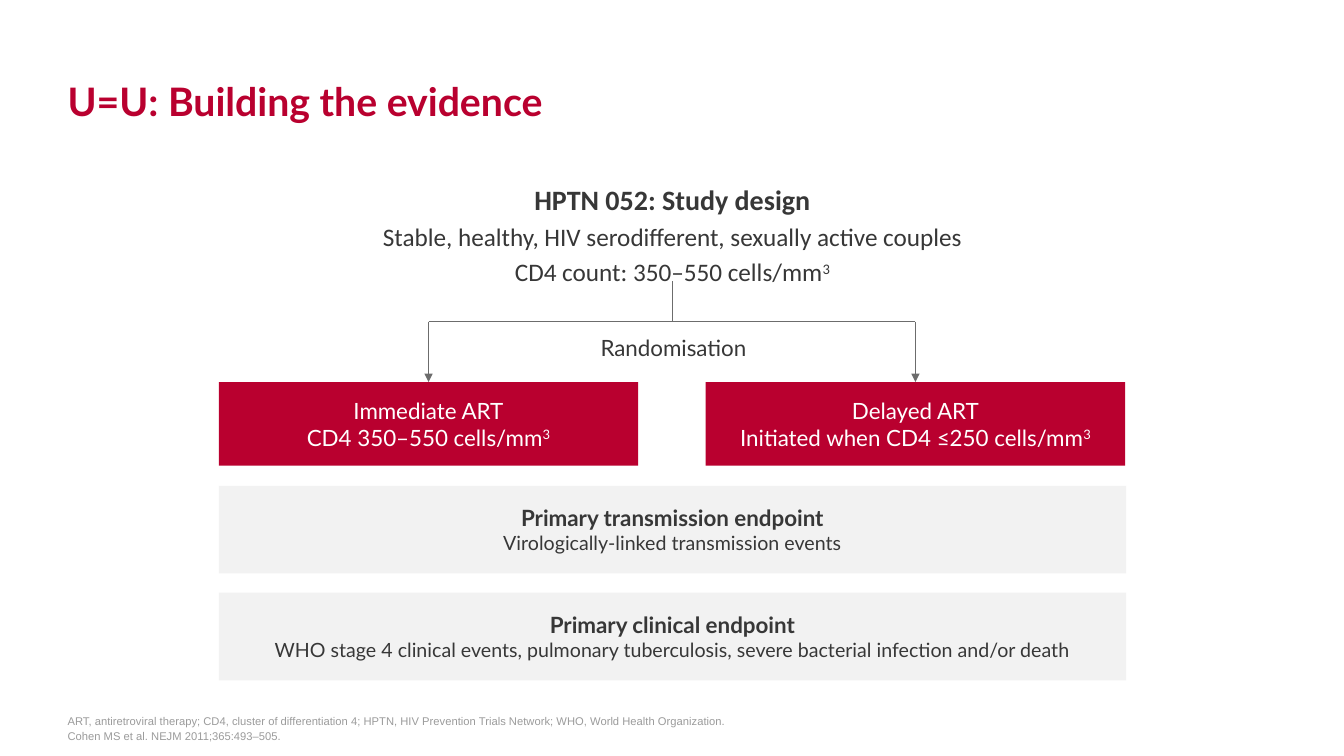
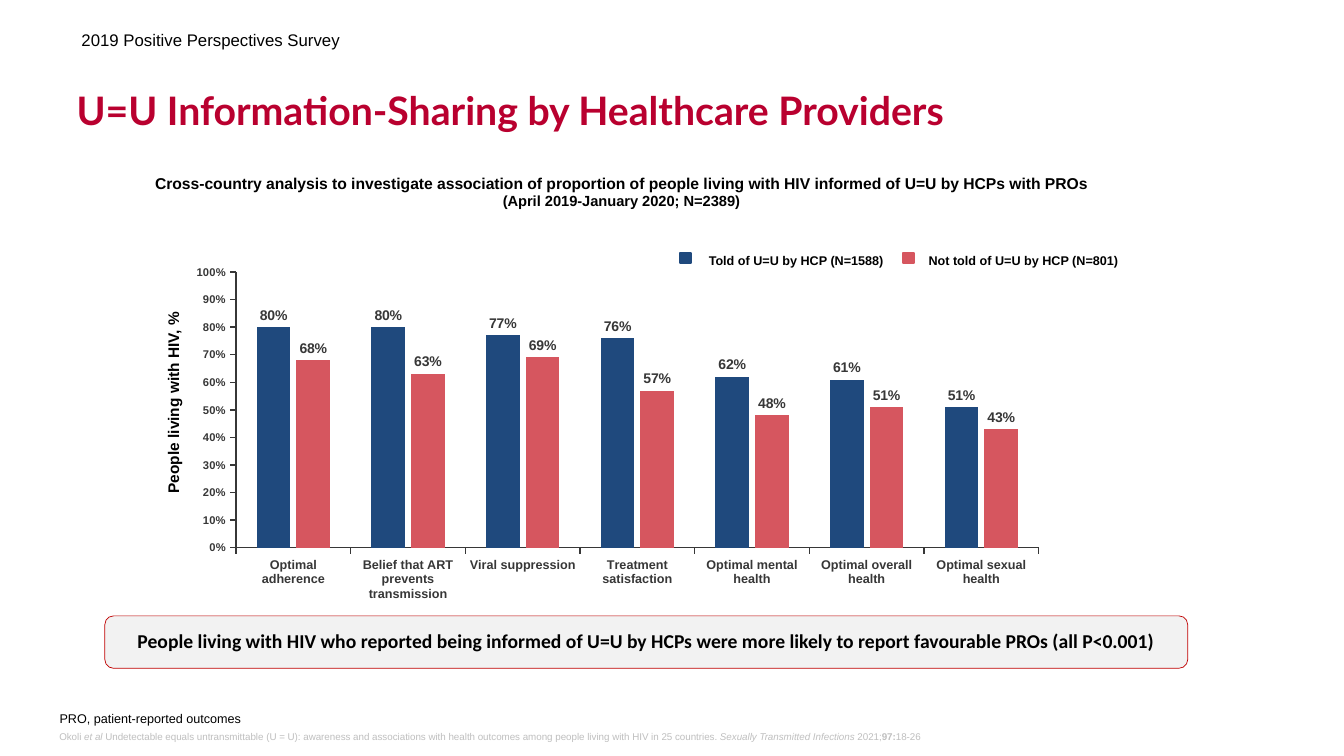
from lxml import etree
from pptx import Presentation
from pptx.chart.data import CategoryChartData
from pptx.dml.color import RGBColor
from pptx.enum.chart import XL_CHART_TYPE, XL_LABEL_POSITION, XL_TICK_MARK
from pptx.enum.shapes import MSO_CONNECTOR, MSO_SHAPE
from pptx.enum.text import MSO_ANCHOR, MSO_AUTO_SIZE, PP_ALIGN
from pptx.oxml import parse_xml
from pptx.oxml.ns import nsdecls, qn
from pptx.util import Emu, Pt

PX = 9144  # 100 px to the inch
COLORS = {
    "red": "B9002F", "border": "C00000", "panel": "F2F2F2", "white": "FFFFFF",
    "black": "000000", "text": "373737", "line": "6C6C6C", "note": "9B9B9B",
    "source": "BFBFBF", "told": "1F497D", "not told": "D6565F",
}
COLORS = {name: RGBColor.from_string(value) for name, value in COLORS.items()}
TITLE = {"name": "Lato", "size": Pt(28), "bold": True, "color": "red"}
LATO = {"name": "Lato", "size": Pt(16), "bold": False, "color": "text"}
CALIBRI = {"name": "Calibri", "size": Pt(18), "bold": False, "color": "text"}
ARIAL = {"name": "Arial", "size": Pt(12), "bold": False, "color": "black"}
CENTER = {"alignment": PP_ALIGN.CENTER}
TIGHT = {"line_spacing": 0.9}
SUPERSCRIPT = {"baseline": "30000"}


def write(box, lines, layout, anchor=MSO_ANCHOR.TOP, inset=True, wrap=True):
    """Fill a shape with lines of (font style, span, ...); a span is text or (text, changes).

    A "space_before" in the layout is left off the first paragraph.
    """
    frame = box.text_frame
    frame.auto_size = MSO_AUTO_SIZE.NONE
    frame.word_wrap = wrap
    frame.vertical_anchor = anchor
    if not inset:
        for side in ("left", "top", "right", "bottom"):
            setattr(frame, f"margin_{side}", 0)
    for index, (style, *spans) in enumerate(lines):
        para = frame.add_paragraph() if index else frame.paragraphs[0]
        for key, value in layout.items():
            if index or key != "space_before":
                setattr(para, key, value)
        for part in spans:
            text, changes = (part, {}) if isinstance(part, str) else part
            span = para.add_run()
            span.text = text
            for key, value in {**style, **changes}.items():
                if key == "color":
                    span.font.color.rgb = COLORS[value]
                elif key == "baseline":
                    span._r.get_or_add_rPr().set(key, value)
                else:
                    setattr(span.font, key, value)


def add_box(page, place, fill=None, line=None, width=1.5, kind=MSO_SHAPE.RECTANGLE):
    """Add a filled shape, or a plain text box when there is no fill."""
    place = [Emu(length * PX) for length in place]
    if fill is None:
        return page.shapes.add_textbox(*place)
    box = page.shapes.add_shape(kind, *place)
    box.shadow.inherit = False
    box.fill.solid()
    box.fill.fore_color.rgb = COLORS[fill]
    if line:
        box.line.color.rgb = COLORS[line]
        box.line.width = Pt(width)
    else:
        box.line.fill.background()
    return box


deck = Presentation()
deck.slide_width, deck.slide_height = Emu(1333 * PX), Emu(750 * PX)

pages = []
for title, place in [
    ("U=U: Building the evidence", (67, 0, 889, 123)),
    ("U=U Information-Sharing by Healthcare Providers", (76, 77, 1041, 55)),
]:
    page = deck.slides.add_slide(deck.slide_layouts[5])
    heading = page.shapes.title
    for side, length in zip(("left", "top", "width", "height"), place):
        setattr(heading, side, Emu(length * PX))
    write(heading, [(TITLE, title)], {"alignment": PP_ALIGN.LEFT},
          MSO_ANCHOR.BOTTOM, inset=False)
    pages.append(page)
design_page, survey_page = pages

# Study design
LEFT, WIDTH = 217, 900
ARM_WIDTH, ARM_TOP, FORK_TOP = 416, 379, 319
write(add_box(design_page, (LEFT, 181, WIDTH, 105)), [
    ({**CALIBRI, "size": Pt(20), "bold": True}, "HPTN 052: Study design"),
    (CALIBRI, "Stable, healthy, HIV serodifferent, sexually active couples"),
    (CALIBRI, "CD4 count: 350–550 cells/mm", ("3", SUPERSCRIPT)),
], {**CENTER, "space_before": Pt(3.6)}, inset=False)

arm_style = {**LATO, "color": "white"}
arm_centers = []
for left, name, rule in [
    (LEFT, "Immediate ART", "CD4 350–550 cells/mm"),
    (700, "Delayed ART", "Initiated when CD4 ≤250 cells/mm"),
]:
    arm = add_box(design_page, (left, ARM_TOP, ARM_WIDTH, 83), "red")
    write(arm, [(arm_style, name), (arm_style, rule, ("3", SUPERSCRIPT))],
          CENTER, MSO_ANCHOR.MIDDLE)
    arm_centers.append(left + ARM_WIDTH // 2)

for top, endpoint, detail in [
    (482, "Primary transmission endpoint", "Virologically-linked transmission events"),
    (588, "Primary clinical endpoint", "WHO stage 4 clinical events, pulmonary tuberculosis, "
     "severe bacterial infection and/or death"),
]:
    write(add_box(design_page, (LEFT, top, WIDTH, 87), "panel"), [
        ({**LATO, "bold": True}, endpoint),
        ({**LATO, "size": Pt(14)}, detail),
    ], CENTER, MSO_ANCHOR.MIDDLE)

first, second = arm_centers
middle = LEFT + WIDTH // 2
for x1, y1, x2, y2, arrow in [
    (first, FORK_TOP, first, ARM_TOP, True),
    (second, FORK_TOP, second, ARM_TOP, True),
    (middle, 279, middle, FORK_TOP, False),
    (first, FORK_TOP, second, FORK_TOP, False),
]:
    ends = [Emu(length * PX) for length in (x1, y1, x2, y2)]
    branch = design_page.shapes.add_connector(MSO_CONNECTOR.STRAIGHT, *ends)
    branch.line.color.rgb = COLORS["line"]
    branch.line.width = Pt(1)
    if arrow:
        etree.SubElement(branch.line._get_or_add_ln(), qn("a:tailEnd"), type="triangle")
    etree.SubElement(branch._element.spPr, qn("a:effectLst"))

write(add_box(design_page, (583, 327, 170, 37)), [(LATO, "Randomisation")], CENTER)
note = {**ARIAL, "size": Pt(8), "color": "note"}
write(add_box(design_page, (67, 704, 900, 33)), [
    (note, "ART, antiretroviral therapy; CD4, cluster of differentiation 4; "
     "HPTN, HIV Prevention Trials Network; WHO, World Health Organization."),
    (note, "Cohen MS et al. NEJM 2011;365:493–505."),
], {"space_before": Pt(1.6)}, MSO_ANCHOR.BOTTOM, inset=False)

# Survey results
bold_arial = {**ARIAL, "bold": True}
write(add_box(survey_page, (71, 27, 1046, 25)),
      [(ARIAL, "2019 Positive Perspectives Survey")], TIGHT)
write(add_box(survey_page, (132, 175, 969, 34)), [
    ({**bold_arial, "size": Pt(11.2)}, "Cross-country analysis to investigate association of "
     "proportion of people living with HIV informed of U=U by HCPs with PROs"),
    ({**bold_arial, "size": Pt(10.5)}, "(April 2019-January 2020; N=2389)"),
], {**CENTER, **TIGHT}, inset=False)

groups = [
    ("Told of U=U by HCP (N=1588)", "told", 674, 703,
     (0.80, 0.80, 0.77, 0.76, 0.62, 0.61, 0.51)),
    ("Not told of U=U by HCP (N=801)", "not told", 896, 921,
     (0.68, 0.63, 0.69, 0.57, 0.48, 0.51, 0.43)),
]
data = CategoryChartData(number_format="0%")
data.categories = [
    "Optimal adherence", "Belief that ART prevents transmission", "Viral suppression",
    "Treatment satisfaction", "Optimal mental health", "Optimal overall health",
    "Optimal sexual health",
]
for name, color, swatch_left, label_left, values in groups:
    data.add_series(name, values)
chart_place = [Emu(length * PX) for length in (150, 225, 914, 380)]
chart = survey_page.shapes.add_chart(
    XL_CHART_TYPE.COLUMN_CLUSTERED, *chart_place, data).chart
chart.has_legend = chart.has_title = False
plot = chart.plots[0]
plot.gap_width, plot.overlap, plot.vary_by_categories = 123, -18, False
plot.has_data_labels = True
labels = plot.data_labels
labels.show_value = True
labels.position = XL_LABEL_POSITION.OUTSIDE_END
labels.number_format, labels.number_format_is_linked = "0%", False
category_axis, value_axis = chart.category_axis, chart.value_axis
value_axis.minimum_scale, value_axis.maximum_scale, value_axis.major_unit = 0, 1, 0.1
value_axis.tick_labels.number_format = "0%"
value_axis.tick_labels.number_format_is_linked = False
for axis in (category_axis, value_axis):
    axis.has_major_gridlines = False
    axis.major_tick_mark = XL_TICK_MARK.OUTSIDE
    axis.minor_tick_mark = XL_TICK_MARK.NONE
    axis.format.line.color.rgb = COLORS["text"]
    axis.format.line.width = Pt(1)
for font, size in [
    (chart.font, 10), (labels.font, 10),
    (category_axis.tick_labels.font, 9), (value_axis.tick_labels.font, 8),
]:
    font.name, font.size, font.bold = "Arial", Pt(size), True
    font.color.rgb = COLORS["text"]

plot_area = chart._chartSpace.chart.plotArea
for old_layout in plot_area.findall(qn("c:layout")):
    plot_area.remove(old_layout)
settings = {"layoutTarget": "inner", "xMode": "edge", "yMode": "edge",
            "x": 0.092, "y": 0.118, "w": 0.871, "h": 0.72}
settings_xml = "".join(f'<c:{key} val="{value}"/>' for key, value in settings.items())
plot_area.insert(0, parse_xml(
    f"<c:layout {nsdecls('c')}><c:manualLayout>{settings_xml}</c:manualLayout></c:layout>"))

for series, (name, color, swatch_left, label_left, values) in zip(plot.series, groups):
    series.format.fill.solid()
    series.format.fill.fore_color.rgb = COLORS[color]
    add_box(survey_page, (swatch_left, 251, 11, 10), color, color)
    write(add_box(survey_page, (label_left, 251, 200, 15)),
          [({**bold_arial, "size": Pt(9)}, name)], {}, inset=False, wrap=False)

axis_title = add_box(survey_page, (81, 391, 184, 17))
axis_title.rotation = 270
write(axis_title, [({**bold_arial, "size": Pt(11)}, "People living with HIV, %")],
      {**CENTER, **TIGHT}, inset=False)

conclusion = add_box(survey_page, (104, 611, 1074, 52), "panel", "border", 0.5,
                     MSO_SHAPE.ROUNDED_RECTANGLE)
write(conclusion, [
    ({**CALIBRI, "size": Pt(14), "bold": True, "color": "black"},
     "People living with HIV who reported being informed of U=U by HCPs "
     "were more likely to report favourable PROs (all P<0.001)"),
], {**CENTER, **TIGHT}, MSO_ANCHOR.MIDDLE)

write(add_box(survey_page, (59, 707, 859, 14)),
      [({**ARIAL, "size": Pt(9)}, "PRO, patient-reported outcomes")], TIGHT, inset=False)
italic = {"italic": True}
write(add_box(survey_page, (49, 720, 953, 18)), [
    ({**ARIAL, "size": Pt(7), "color": "source"}, "Okoli ", ("et al ", italic),
     "Undetectable equals untransmittable (U = U): awareness and associations with "
     "health outcomes among people living with HIV in 25 countries. ",
     ("Sexually Transmitted Infections ", italic), "2021;", ("97:", {"bold": True}), "18-26"),
], {})

deck.save("out.pptx")
